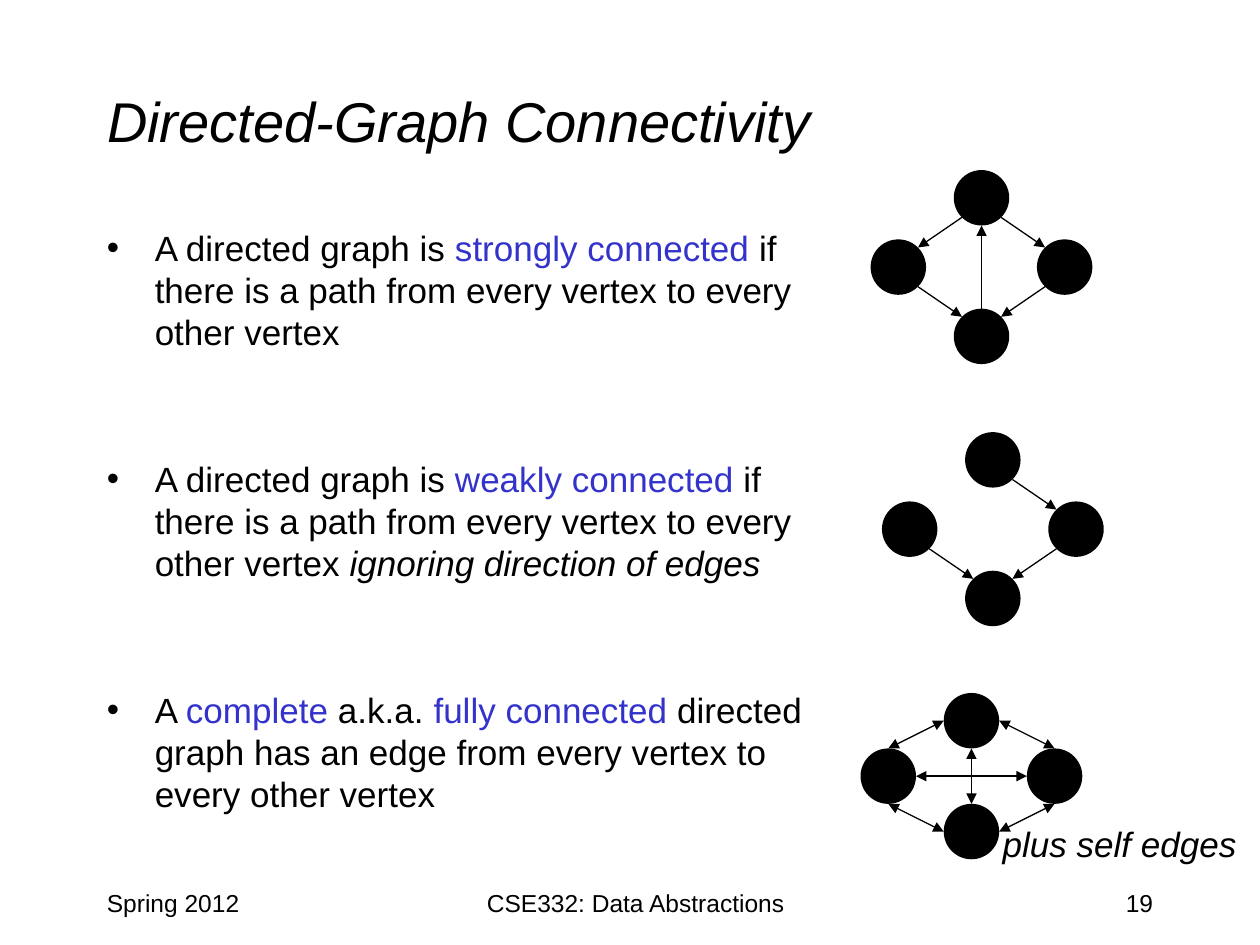
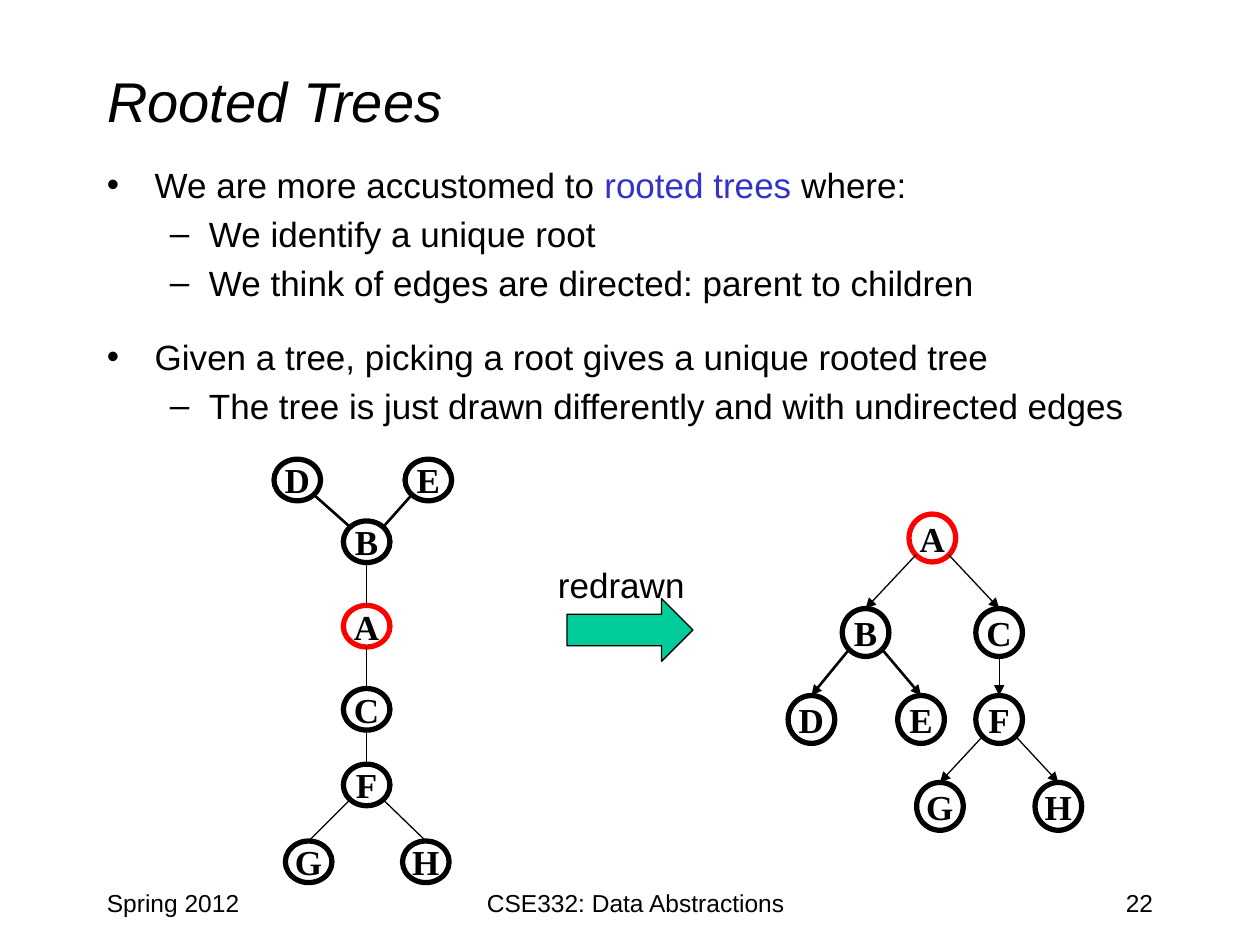
import pptx
import pptx.util
import pptx.dml.color
import pptx.enum.shapes
import pptx.enum.text
import pptx.oxml
import pptx.oxml.ns

COLORS = {"ink": "000000", "term": "3333CC", "root": "FF0000", "arrow": "00CC99"}
SANS, SERIF = "Arial", "Times New Roman"
WIDTH, HEIGHT = 10, 7.5
MARGIN = 0.075 * WIDTH
CONTENT = WIDTH - 2 * MARGIN

TERM = {"color": "term"}
ITALIC = {"italic": True}
LEVELS = [(0.38, 0.38, "•"), (0.81, 0.31, "–")]

CONNECTIVITY = {
    "title": "Directed-Graph Connectivity", "title_top": 0.33, "number": "19",
    "body_box": (MARGIN, 1.75, 6.08, 4.92),
    "body": [
        (0, 4, ["A directed graph is ", ("strongly connected", TERM),
                " if there is a path from every vertex to every other vertex"]),
        (0, 60, ["A directed graph is ", ("weakly connected", TERM),
                 " if there is a path from every vertex to every other vertex ",
                 ("ignoring direction of edges", ITALIC)]),
        (0, 60, ["A ", ("complete", TERM), " a.k.a. ", ("fully connected", TERM),
                 " directed graph has an edge from every vertex to every other vertex"]),
    ],
}
ROOTED = {
    "title": "Rooted Trees", "title_top": 0.17, "number": "22",
    "body_box": (MARGIN, 1.25, CONTENT, 2.5),
    "body": [
        (0, 4, ["We are more accustomed to ", ("rooted trees", TERM), " where:"]),
        (1, 4, ["We identify a unique root"]),
        (1, 4, ["We think of edges are directed: parent to children"]),
        (0, 18, ["Given a tree, picking a root gives a unique rooted tree"]),
        (1, 4, ["The tree is just drawn differently and with undirected edges"]),
    ],
}
FOOTER = [("Spring 2012", MARGIN, 2.08, "LEFT"),
          ("CSE332: Data Abstractions", 3.17, 3.75, "CENTER")]

DIAMOND = {"N": (0, -1), "S": (0, 1), "E": (1, 0), "W": (-1, 0)}
DIAMOND_GRAPHS = [
    {"center": (7.79, 2.12), "reach": (0.66, 0.55), "heads": ("tail",),
     "edges": "N.bl-W.tr N.br-E.tl E.bl-S.tr W.br-S.tl S.t-N.b"},
    {"center": (7.88, 4.2), "reach": (0.66, 0.55), "heads": ("tail",),
     "edges": "N.br-E.tl E.bl-S.tr W.br-S.tl"},
    {"center": (7.71, 6.16), "reach": (0.66, 0.44), "heads": ("head", "tail"),
     "edges": "S.t-N.b W.r-E.l N.l-W.t N.r-E.t E.b-S.r S.l-W.b"},
]
TREES = [
    {"nodes": {"D": (2.36, 3.81), "E": (3.4, 3.81), "B": (2.91, 4.3), "A": (2.91, 4.97),
               "C": (2.91, 5.63), "F": (2.91, 6.23), "G": (2.45, 6.84), "H": (3.38, 6.84)},
     "size": (0.37, 0.33), "heads": (),
     "edges": "A.t-B.b A.b-C.t C.b-F.t F.bl-G.t F.br-H.t", "bold": "B.tr-E.bl B.tl-D.br"},
    {"nodes": {"A": (7.4, 4.27), "B": (6.87, 5.02), "C": (7.93, 5.02), "D": (6.44, 5.71),
               "E": (7.31, 5.71), "F": (7.93, 5.71), "G": (7.46, 6.4), "H": (8.4, 6.4)},
     "size": (0.37, 0.38), "heads": ("tail",),
     "edges": "A.bl-B.t A.br-C.t C.b-F.t F.bl-G.t F.br-H.t", "bold": "B.br-E.t B.bl-D.t"},
]
SIDES = {"t": (0, -1), "b": (0, 1), "l": (-1, 0), "r": (1, 0)}


def inches(*values):
    return [pptx.util.Inches(v) for v in values]


def rgb(name):
    return pptx.dml.color.RGBColor.from_string(COLORS[name])


def add_xml(parent, tag, **attrs):
    el = pptx.oxml.parse_xml(f"<a:{tag} {pptx.oxml.ns.nsdecls('a')}/>")
    for key, value in attrs.items():
        el.set(key, str(value))
    parent.append(el)


def write(p, text, size=20, font=SANS, color="ink", bold=False, italic=False, align="LEFT"):
    p.alignment = getattr(pptx.enum.text.PP_ALIGN, align)
    r = p.add_run()
    r.text = text
    r.font.size, r.font.name = pptx.util.Pt(size), font
    r.font.bold, r.font.italic = bold, italic
    r.font.color.rgb = rgb(color)


def add_text(slide, box, text, wrap=True, **fmt):
    tf = slide.shapes.add_textbox(*inches(*box)).text_frame
    tf.word_wrap = wrap
    write(tf.paragraphs[0], text, **fmt)


def add_body(slide, box, items):
    tf = slide.shapes.add_textbox(*inches(*box)).text_frame
    tf.word_wrap = True
    for i, (level, before, runs) in enumerate(items):
        p = tf.add_paragraph() if i else tf.paragraphs[0]
        p.level = level
        p.space_before = pptx.util.Pt(before)
        for run in runs:
            text, fmt = (run, {}) if isinstance(run, str) else run
            write(p, text, **fmt)
        left, hang, bullet = LEVELS[level]
        pPr = p._p.get_or_add_pPr()
        pPr.set("marL", str(pptx.util.Inches(left)))
        pPr.set("indent", str(-pptx.util.Inches(hang)))
        add_xml(pPr, "buFont", typeface=SANS)
        add_xml(pPr, "buChar", char=bullet)


def add_shape(shapes, kind, box, fill=None, line=None, width=0.75):
    sp = shapes.add_shape(getattr(pptx.enum.shapes.MSO_SHAPE, kind), *inches(*box))
    sp.shadow.inherit = False
    for part, color in ((sp.fill, fill), (sp.line.fill, line)):
        if color:
            part.solid()
            part.fore_color.rgb = rgb(color)
        else:
            part.background()
    if line:
        sp.line.width = pptx.util.Pt(width)
    return sp


def rim_point(end, nodes, size):
    name, site = end.split(".")
    dx, dy = (sum(SIDES[s][axis] for s in site) for axis in (0, 1))
    shrink = len(site) ** -0.5 / 2
    x, y = nodes[name]
    return x + dx * shrink * size[0], y + dy * shrink * size[1]


def add_edges(shapes, edges, nodes, size, heads, width=0.75):
    for edge in edges.split():
        start, end = (rim_point(e, nodes, size) for e in edge.split("-"))
        cx = shapes.add_connector(pptx.enum.shapes.MSO_CONNECTOR.STRAIGHT, *inches(*start, *end))
        cx.line.color.rgb = rgb("ink")
        cx.line.width = pptx.util.Pt(width)
        for head in heads:
            add_xml(cx.line._get_or_add_ln(), head + "End", type="triangle")
        add_xml(cx._element.spPr, "effectLst")


def node_box(center, size):
    return center[0] - size[0] / 2, center[1] - size[1] / 2, *size


def add_diamond(slide, graph):
    shapes = slide.shapes.add_group_shape().shapes
    size = (0.44, 0.44)
    nodes = {name: tuple(c + u * r for c, u, r in zip(graph["center"], unit, graph["reach"]))
             for name, unit in DIAMOND.items()}
    for center in nodes.values():
        add_shape(shapes, "OVAL", node_box(center, size), fill="ink")
    add_edges(shapes, graph["edges"], nodes, size, graph["heads"])


def add_tree(slide, tree):
    shapes = slide.shapes.add_group_shape().shapes
    nodes, size, heads = tree["nodes"], tree["size"], tree["heads"]
    for name, center in nodes.items():
        sp = add_shape(shapes, "OVAL", node_box(center, size),
                       line="root" if name == "A" else "ink", width=3)
        tf = sp.text_frame
        tf.word_wrap = False
        tf.vertical_anchor = pptx.enum.text.MSO_ANCHOR.MIDDLE
        write(tf.paragraphs[0], name, font=SERIF, bold=True, align="CENTER")
    add_edges(shapes, tree["edges"], nodes, size, heads)
    add_edges(shapes, tree["bold"], nodes, size, heads, width=1.5)


def add_slide(prs, content):
    slide = prs.slides.add_slide(prs.slide_layouts[5])
    title = slide.shapes.title
    title.left, title.top, title.width, title.height = inches(
        MARGIN, content["title_top"], CONTENT, 1.25)
    tf = title.text_frame
    tf.auto_size = pptx.enum.text.MSO_AUTO_SIZE.NONE
    tf.vertical_anchor = pptx.enum.text.MSO_ANCHOR.MIDDLE
    write(tf.paragraphs[0], content["title"], size=32, italic=True)
    add_body(slide, content["body_box"], content["body"])
    number = (content["number"], WIDTH - MARGIN - 2.08, 2.08, "RIGHT")
    for text, left, width, align in FOOTER + [number]:
        add_text(slide, (left, HEIGHT - 0.5, width, 0.5), text, size=14, align=align)
    return slide


def main():
    prs = pptx.Presentation()
    prs.slide_width, prs.slide_height = inches(WIDTH, HEIGHT)

    slide = add_slide(prs, CONNECTIVITY)
    for graph in DIAMOND_GRAPHS:
        add_diamond(slide, graph)
    add_text(slide, (7.86, 6.48, 2.07, 0.44), "plus self edges", wrap=False, italic=True)

    slide = add_slide(prs, ROOTED)
    add_shape(slide.shapes, "RIGHT_ARROW", (4.5, 4.75, 1, 0.5), fill="arrow", line="ink")
    add_text(slide, (4.33, 4.42, 1.22, 0.44), "redrawn", wrap=False)
    for tree in TREES:
        add_tree(slide, tree)

    prs.save("out.pptx")


if __name__ == "__main__":
    main()
